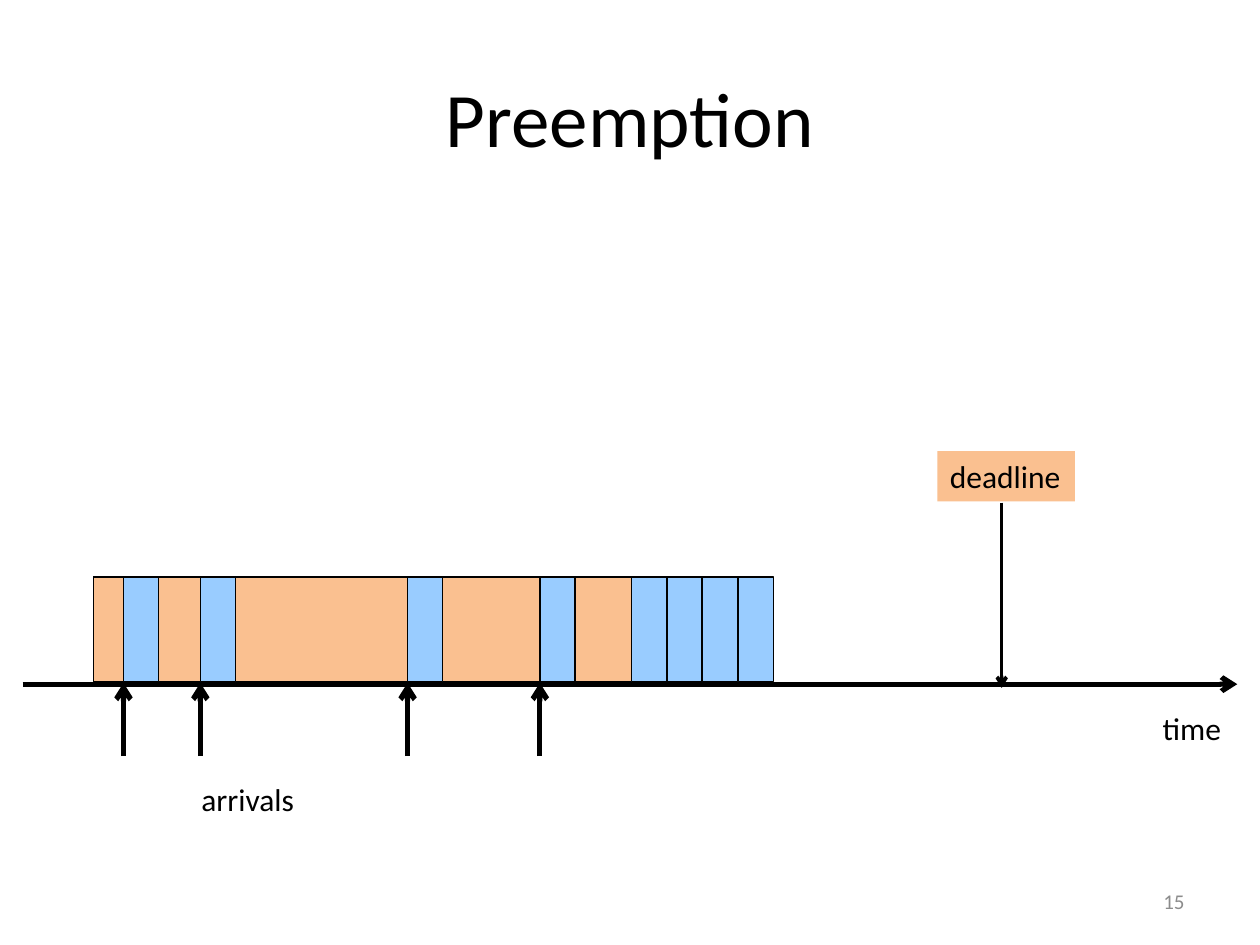
"""Build the preemption timeline slide."""
from lxml import etree
from pptx import Presentation
from pptx.dml.color import RGBColor
from pptx.enum.shapes import MSO_CONNECTOR, MSO_SHAPE
from pptx.enum.text import MSO_ANCHOR, MSO_AUTO_SIZE, PP_ALIGN
from pptx.oxml.ns import qn
from pptx.util import Inches, Pt

RECTANGLE, STRAIGHT = MSO_SHAPE.RECTANGLE, MSO_CONNECTOR.STRAIGHT
TOP, MIDDLE = MSO_ANCHOR.TOP, MSO_ANCHOR.MIDDLE
LEFT, CENTER, RIGHT = PP_ALIGN.LEFT, PP_ALIGN.CENTER, PP_ALIGN.RIGHT
FIT_SHAPE, FIT_NONE = MSO_AUTO_SIZE.SHAPE_TO_FIT_TEXT, MSO_AUTO_SIZE.NONE

THEME = {
    "font": "Calibri", "title": 44, "label": 18, "number": 12,
    "ink": "000000", "muted": "8C8C8C", "task": "FAC090", "interrupt": "99CCFF",
    "outline": 0.75, "axis": 2.89, "deadline": 2, "arrival": 3,
}

TITLE = ("Preemption", (0.5, 0.3, 9, 1.25))
PAGE_NUMBER = ("15", (7.17, 6.95, 2.33, 0.4))
LABELS = [
    ("time", (9.13, 5.58, 0.67, 0.4), None),
    ("deadline", (7.44, 3.58, 1.09, 0.4), "task"),
    ("arrivals", (1.5, 6.14, 0.94, 0.4), None),
]
ARRIVALS = [0.98, 1.59, 3.235, 4.285]
TASK_START, TASK_WIDTHS = 0.74, [4.26, 5.39]
DEFERRED_START, DEFERRED_COUNT = 5.01, 4
BAR_TOP, BAR_HEIGHT, SLICE_WIDTH = 4.58, 0.83, 0.28
AXIS = ((0.18, 5.43), (9.82, 5.43))
DEADLINE = ((7.95, 3.99), (7.95, 5.46))
ARRIVAL_BASE, ARRIVAL_TIP = 6, 5.42


def color(name):
    return RGBColor.from_string(THEME[name])


def add_text(slide, text, box, size="label", ink="ink", fill=None,
             align=LEFT, anchor=TOP, wrap=False):
    label = slide.shapes.add_textbox(*map(Inches, box))
    if fill:
        label.fill.solid()
        label.fill.fore_color.rgb = color(fill)
    frame = label.text_frame
    frame.word_wrap = wrap
    frame.auto_size = FIT_NONE if wrap else FIT_SHAPE
    frame.vertical_anchor = anchor
    paragraph = frame.paragraphs[0]
    paragraph.alignment = align
    run = paragraph.add_run()
    run.text = text
    run.font.name = THEME["font"]
    run.font.size = Pt(THEME[size])
    run.font.color.rgb = color(ink)


def add_bar(slide, left, width, fill):
    bar = slide.shapes.add_shape(
        RECTANGLE, *map(Inches, (left, BAR_TOP, width, BAR_HEIGHT)))
    bar.shadow.inherit = False
    bar.fill.solid()
    bar.fill.fore_color.rgb = color(fill)
    bar.line.color.rgb = color("ink")
    bar.line.width = Pt(THEME["outline"])


def add_arrow(slide, start, end, weight):
    arrow = slide.shapes.add_connector(STRAIGHT, *map(Inches, start + end))
    arrow.line.color.rgb = color("ink")
    arrow.line.width = Pt(THEME[weight])
    etree.SubElement(arrow.line._get_or_add_ln(), qn("a:tailEnd"), type="arrow")
    etree.SubElement(arrow._element.spPr, qn("a:effectLst"))


def main():
    deck = Presentation()
    deck.slide_width, deck.slide_height = Inches(10), Inches(7.5)
    slide = deck.slides.add_slide(deck.slide_layouts[6])

    add_text(slide, *TITLE, size="title", align=CENTER, anchor=MIDDLE, wrap=True)
    add_text(slide, *PAGE_NUMBER, size="number", ink="muted",
             align=RIGHT, anchor=MIDDLE, wrap=True)
    add_arrow(slide, *AXIS, "axis")
    for width in TASK_WIDTHS:
        add_bar(slide, TASK_START, width, "task")
    deferred = [DEFERRED_START + i * (SLICE_WIDTH + 0.003)
                for i in range(DEFERRED_COUNT)]
    for left in ARRIVALS + deferred:
        add_bar(slide, left, SLICE_WIDTH, "interrupt")
    for text, box, fill in LABELS:
        add_text(slide, text, box, fill=fill)
    add_arrow(slide, *DEADLINE, "deadline")
    for moment in ARRIVALS:
        add_arrow(slide, (moment, ARRIVAL_BASE), (moment, ARRIVAL_TIP), "arrival")

    deck.save("out.pptx")


if __name__ == "__main__":
    main()
